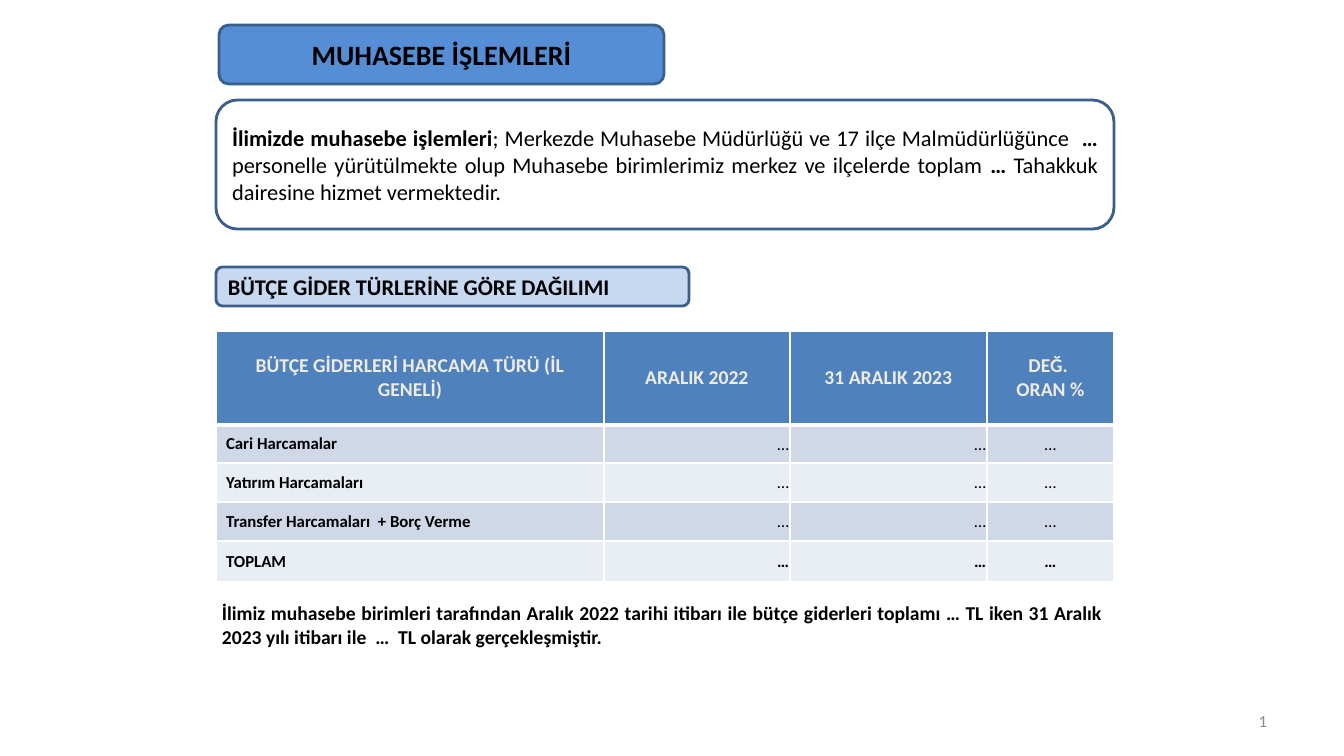
from lxml.etree import SubElement
from pptx import Presentation
from pptx.dml.color import RGBColor
from pptx.enum.shapes import MSO_SHAPE
from pptx.enum.text import MSO_ANCHOR, PP_ALIGN
from pptx.oxml import parse_xml
from pptx.oxml.ns import nsdecls, qn
from pptx.util import Pt

SCALE = 914400 / 100.8
LEFT, CENTER, RIGHT, JUST = PP_ALIGN.LEFT, PP_ALIGN.CENTER, PP_ALIGN.RIGHT, PP_ALIGN.JUSTIFY


def px(*nums):
    """Turn pixel lengths into a list of EMU."""
    return [round(n * SCALE) for n in nums]


def write(frame, *lines, size=14, color="000000", bold=True, align=LEFT):
    """Fill a frame; each line is a text or a list of (text, bold) runs."""
    frame.word_wrap = True
    frame.vertical_anchor = MSO_ANCHOR.MIDDLE
    for i, line in enumerate(lines):
        para = frame.add_paragraph() if i else frame.paragraphs[0]
        para.alignment = align
        for text, heavy in [(line, bold)] if isinstance(line, str) else line:
            run = para.add_run()
            run.text = text
            run.font.name = "Calibri"
            run.font.size = Pt(size)
            run.font.bold = heavy
            run.font.color.rgb = RGBColor.from_string(color)


deck = Presentation()
deck.slide_width, deck.slide_height = px(1344, 756)
slide = deck.slides.add_slide(deck.slide_layouts[5])
shapes = slide.shapes

# Rounded boxes
boxes = []
for place, fill in [
    ((219, 25, 445, 59), "558ED5"),
    ((216, 100, 898, 129), None),
    ((216, 267, 473, 39), "C6D9F1"),
]:
    box = shapes.add_shape(MSO_SHAPE.ROUNDED_RECTANGLE, *px(*place))
    box.shadow.inherit = False
    box.line.color.rgb = RGBColor.from_string("3A5F8C")
    box.line.width = Pt(2)
    if fill:
        box.fill.solid()
        box.fill.fore_color.rgb = RGBColor.from_string(fill)
    else:
        box.fill.background()
    boxes.append(box)
banner, intro, label = boxes

# Title sits on top of its banner
title = shapes.title
title.left, title.top, title.width, title.height = banner.left, banner.top, banner.width, banner.height
write(title.text_frame, "MUHASEBE İŞLEMLERİ", size=20, align=CENTER)
banner._element.addnext(title._element)

write(intro.text_frame, [
    ("İlimizde muhasebe işlemleri", True),
    ("; Merkezde Muhasebe Müdürlüğü ve 17 ilçe Malmüdürlüğünce  ", False),
    ("… ", True),
    ("personelle yürütülmekte olup Muhasebe birimlerimiz merkez ve ilçelerde toplam ", False),
    ("… ", True),
    ("Tahakkuk dairesine hizmet vermektedir.", False),
], size=16, align=JUST)
write(label.text_frame, "BÜTÇE GİDER TÜRLERİNE GÖRE DAĞILIMI", size=16)

# Budget table
heads = [["BÜTÇE GİDERLERİ HARCAMA TÜRÜ (İL GENELİ)"], ["ARALIK 2022"],
         ["31 ARALIK 2023"], ["DEĞ. ", "ORAN %"]]
names = ["Cari Harcamalar", "Yatırım Harcamaları",
         "Transfer Harcamaları  + Borç Verme", "TOPLAM"]
rows = [heads] + [[[name]] + [["…"]] * 3 for name in names]
aligns = [LEFT, RIGHT, RIGHT, CENTER]
table = shapes.add_table(5, 4, *px(216, 331, 898, 251)).table
for col, width in zip(table.columns, px(388, 186, 197, 127)):
    col.width = width
for row, height in zip(table.rows, px(94, 38, 39, 39, 41)):
    row.height = height
for r, row in enumerate(rows):
    fill = "4F81BD" if r == 0 else "D0D8E8" if r % 2 else "E9EDF4"
    for c, lines in enumerate(row):
        cell = table.cell(r, c)
        if r == 0:
            write(cell.text_frame, *lines, color="EEECE1", align=CENTER)
        else:
            write(cell.text_frame, *lines, size=12, bold=c == 0 or r == 4, align=aligns[c])
        cell.vertical_anchor = MSO_ANCHOR.MIDDLE
        if r and c:
            cell.margin_left, cell.margin_right, cell.margin_top, cell.margin_bottom = px(1, 1, 1, 0)
        props = cell._tc.get_or_add_tcPr()
        for side in "LRTB":
            thick = (r, side) in [(0, "B"), (1, "T")]
            props.append(parse_xml(
                f'<a:ln{side} {nsdecls("a")} w="{Pt(3 if thick else 1)}"><a:solidFill>'
                f'<a:srgbClr val="FFFFFF"/></a:solidFill></a:ln{side}>'))
        cell.fill.solid()
        cell.fill.fore_color.rgb = RGBColor.from_string(fill)

# Closing note
note = shapes.add_textbox(*px(212, 596, 901, 57)).text_frame
write(note, "İlimiz muhasebe birimleri tarafından Aralık 2022 tarihi itibarı ile bütçe "
      "giderleri toplamı … TL iken 31 Aralık 2023 yılı itibarı ile  …  TL olarak "
      "gerçekleşmiştir.", align=JUST)
note.vertical_anchor = MSO_ANCHOR.TOP

# Slide number as a live field
number = shapes.add_textbox(*px(964, 701, 313, 40)).text_frame
write(number, "1", size=12, color="898989", bold=False, align=RIGHT)
run = number.paragraphs[0].runs[0]._r
field = SubElement(run.getparent(), qn("a:fld"), type="slidenum",
                   id="{B6F15528-21DE-4FAA-801E-634DDDAF4B2B}")
field.extend(list(run))
run.getparent().remove(run)

deck.save("out.pptx")
